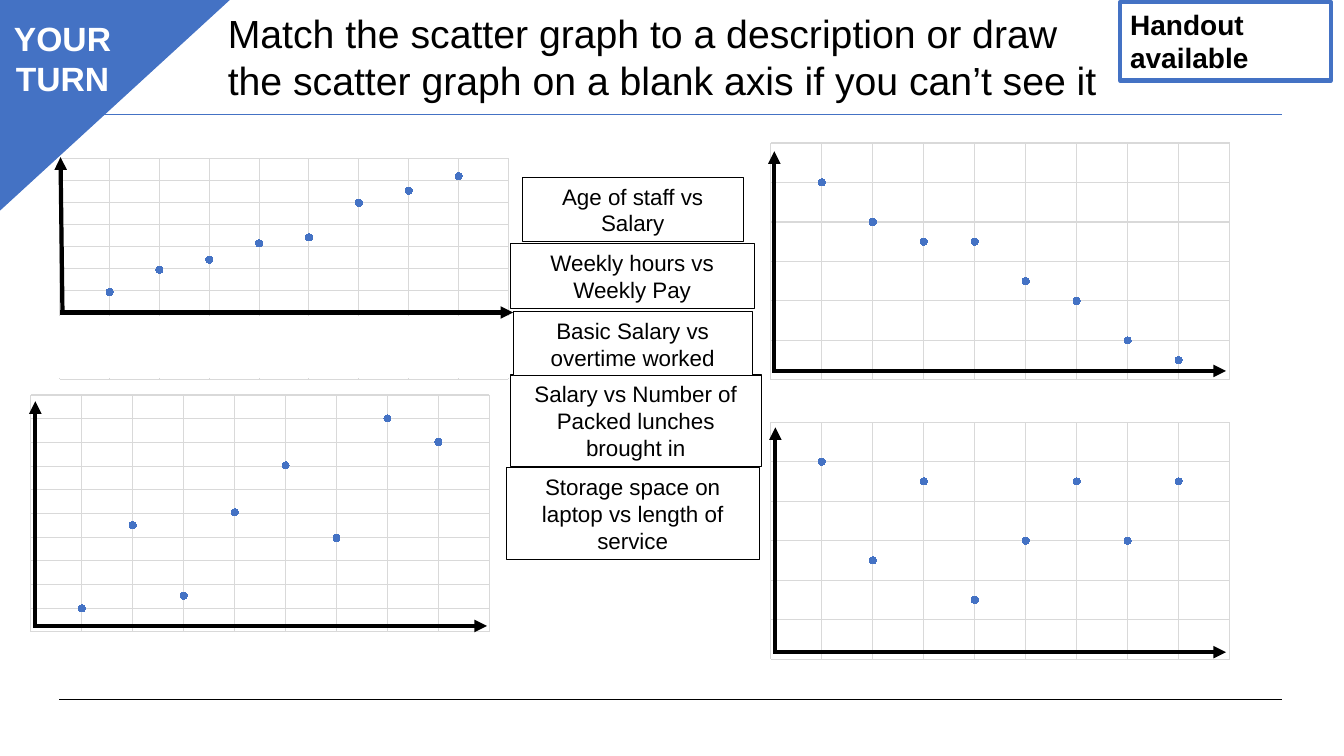
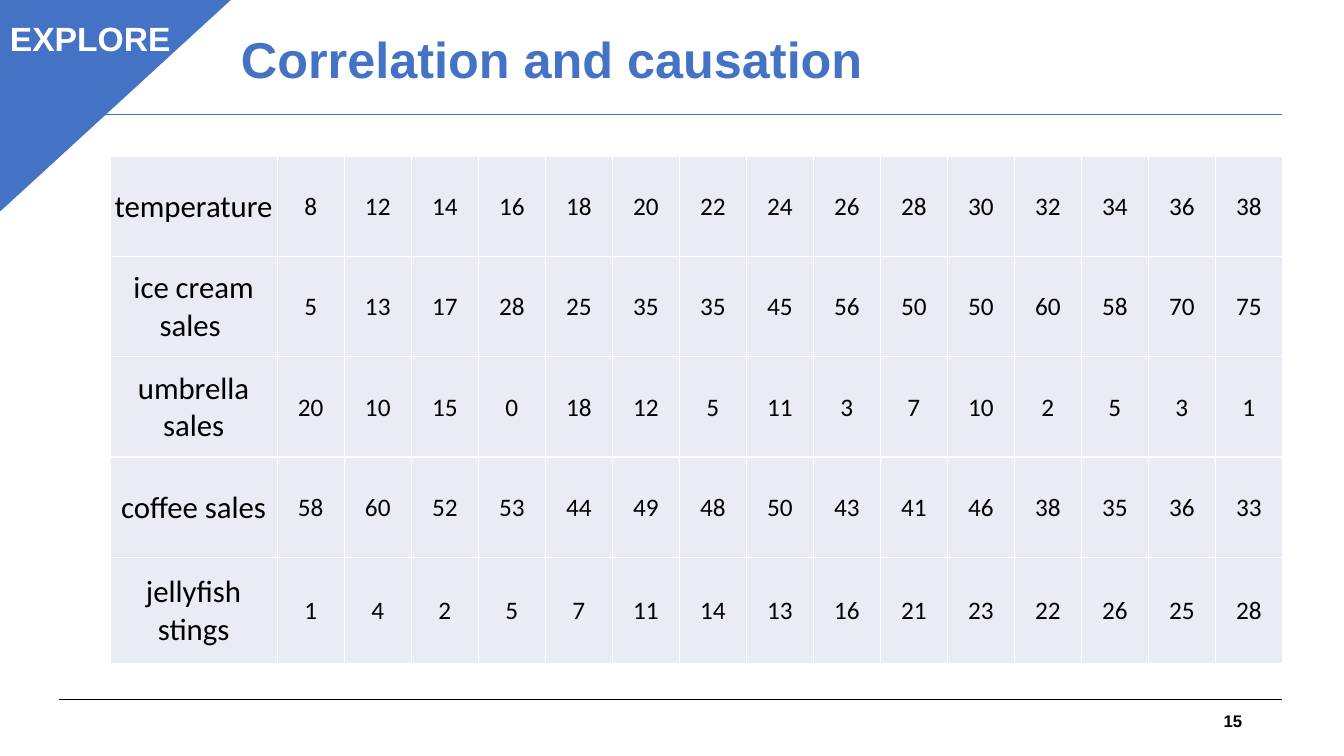
from dataclasses import dataclass

from lxml import etree
from pptx import Presentation
from pptx import util as u
from pptx.chart.data import XyChartData
from pptx.dml.color import RGBColor
from pptx.enum import chart as ch
from pptx.enum import shapes, text
from pptx.oxml.ns import qn

IN = u.Inches


@dataclass(frozen=True)
class Theme:
    blue: RGBColor = RGBColor(0x44, 0x72, 0xC4)
    black: RGBColor = RGBColor(0, 0, 0)
    white: RGBColor = RGBColor(255, 255, 255)
    grid: RGBColor = RGBColor(0xD9, 0xD9, 0xD9)
    cell: RGBColor = RGBColor(0xE9, 0xEB, 0xF5)
    font: str = "Arial"
    data_font: str = "Calibri"
    task: int = 28
    heading: int = 36
    tag: int = 24
    handout: int = 20
    label: int = 16
    number: int = 12
    row_head: int = 22
    value: int = 18
    axis: int = 10
    thin: float = 0.75
    thick: float = 3


T = Theme()

GRAPHS = [
    dict(at=(0.54, 1.32), plot=(0.011, 0.102, 0.939, 0.898), top=109, step=10.9,
         ys=(43, 54, 59, 67, 70, 87, 93, 100), mask=(0.54, 3.14, 4.55, 0.6),
         corner=(0.6, 3.1), tip=(5.09, 1.56), stem=(0.62, 0.6)),
    dict(at=(7.55, 1.37), top=120, step=20, ys=(100, 80, 70, 70, 50, 40, 20, 10),
         corner=(7.66, 3.68), tip=(12.16, 1.5), stem=(7.68, 7.68)),
    dict(at=(7.55, 4.14), top=120, step=20, ys=(100, 50, 90, 30, 60, 90, 60, 90),
         corner=(7.67, 6.47), tip=(12.16, 4.24), stem=(7.69, 7.69)),
    dict(at=(0.21, 3.87), top=111, step=11.1, ys=(11, 50, 17, 56, 78, 44, 100, 89),
         corner=(0.33, 6.21), tip=(4.83, 3.98), stem=(0.35, 0.35)),
]

LABELS = [
    ("Age of staff vs Salary", (5.18, 1.76, 2.19, 0.64)),
    ("Weekly hours vs Weekly Pay", (5.06, 2.42, 2.42, 0.64)),
    ("Storage space on laptop vs length of service", (5.02, 4.64, 2.51, 0.91)),
    ("Salary vs Number of Packed lunches brought in", (5.06, 3.72, 2.49, 0.91)),
    ("Basic Salary vs overtime worked", (5.09, 3.09, 2.37, 0.64)),
]

ROWS = [
    ("temperature", 8, 12, 14, 16, 18, 20, 22, 24, 26, 28, 30, 32, 34, 36, 38),
    ("ice cream sales ", 5, 13, 17, 28, 25, 35, 35, 45, 56, 50, 50, 60, 58, 70, 75),
    ("umbrella sales", 20, 10, 15, 0, 18, 12, 5, 11, 3, 7, 10, 2, 5, 3, 1),
    ("coffee sales", 58, 60, 52, 53, 44, 49, 48, 50, 43, 41, 46, 38, 35, 36, 33),
    ("jellyfish stings", 1, 4, 2, 5, 7, 11, 14, 13, 16, 21, 23, 22, 26, 25, 28),
]


def inches(values):
    return [IN(v) for v in values]


def style_font(f, size, color=T.black, bold=False, name=T.font):
    f.size, f.bold, f.name = u.Pt(size), bold, name
    f.color.rgb = color


def write(sp, words, size, color=T.black, bold=False, align="LEFT", anchor="TOP"):
    tf = sp.text_frame
    tf.text = words
    tf.word_wrap = True
    tf.auto_size = text.MSO_AUTO_SIZE.NONE
    tf.vertical_anchor = getattr(text.MSO_ANCHOR, anchor)
    for p in tf.paragraphs:
        p.alignment = getattr(text.PP_ALIGN, align)
        style_font(p.font, size, color, bold)


def title(s, words, box, size, color=T.black, bold=False):
    sp = s.shapes.title
    sp.left, sp.top, sp.width, sp.height = inches(box)
    write(sp, words, size, color, bold)


def text_box(s, words, box, size, **style):
    write(s.shapes.add_textbox(*inches(box)), words, size, **style)


def shape(s, kind, box, fill, line, width):
    sp = s.shapes.add_shape(kind, *inches(box))
    sp.shadow.inherit = False
    if fill is None:
        sp.fill.background()
    else:
        sp.fill.solid()
        sp.fill.fore_color.rgb = fill
    sp.line.color.rgb = line
    sp.line.width = u.Pt(width)
    return sp


def rect(s, box, fill=T.white, line=T.black, width=T.thin):
    return shape(s, shapes.MSO_SHAPE.RECTANGLE, box, fill, line, width)


def line(s, start, end, color=T.black, width=T.thin, arrow=False):
    cn = s.shapes.add_connector(shapes.MSO_CONNECTOR.STRAIGHT, *inches(start + end))
    cn.line.color.rgb = color
    cn.line.width = u.Pt(width)
    if arrow:
        etree.SubElement(cn.line._get_or_add_ln(), qn("a:tailEnd"), type="triangle")
    etree.SubElement(cn.element.spPr, qn("a:effectLst"))
    return cn


def corner_tag(s, words, box, left=0.0):
    sp = shape(s, shapes.MSO_SHAPE.ISOSCELES_TRIANGLE, (left, -0.01, 2.29, 2.1),
               T.blue, T.blue, 1)
    sp.adjustments[0] = 0
    sp.element.spPr.find(qn("a:xfrm")).set("flipV", "1")
    text_box(s, words, box, T.tag, color=T.white, bold=True, align="CENTER")


def style_axis(ax, top, step):
    ax.minimum_scale, ax.maximum_scale, ax.major_unit = 0, top, step
    ax.has_major_gridlines = True
    ax.major_gridlines.format.line.color.rgb = T.grid
    ax.major_gridlines.format.line.width = u.Pt(T.thin)
    ax.visible = False


def set_plot_area(chart, plot):
    area = chart._chartSpace.chart.plotArea
    for old in area.findall(qn("c:layout")):
        area.remove(old)
    layout = etree.Element(qn("c:layout"))
    manual = etree.SubElement(layout, qn("c:manualLayout"))
    parts = [("layoutTarget", "inner"), ("xMode", "edge"), ("yMode", "edge")]
    for tag, val in parts + list(zip("xywh", plot)):
        etree.SubElement(manual, qn(f"c:{tag}"), val=str(val))
    area.insert(0, layout)


def scatter(s, at, ys, top, step, corner, tip, stem,
            plot=(0.02, 0.02, 0.96, 0.96), mask=None):
    data = XyChartData()
    points = data.add_series("Series 1")
    for x, y in enumerate(ys, 1):
        points.add_data_point(x, y)
    chart = s.shapes.add_chart(ch.XL_CHART_TYPE.XY_SCATTER,
                               *inches(at + (4.74, 2.45)), data).chart
    chart.has_legend = chart.has_title = False
    style_font(chart.font, T.axis, name=T.data_font)
    chart.plots[0].vary_by_categories = False
    ser = chart.plots[0].series[0]
    ser.smooth = False
    ser.format.line.fill.background()
    ser.marker.style, ser.marker.size = ch.XL_MARKER_STYLE.CIRCLE, 5
    ser.marker.format.fill.solid()
    ser.marker.format.fill.fore_color.rgb = T.blue
    ser.marker.format.line.color.rgb = T.blue
    style_axis(chart.category_axis, len(ys) + 1, 1)
    style_axis(chart.value_axis, top, step)
    set_plot_area(chart, plot)
    if mask:
        rect(s, mask, line=T.white, width=1)
    base, peak = corner[1], tip[1]
    line(s, (stem[0], base), (stem[1], peak), width=T.thick, arrow=True)
    line(s, corner, (tip[0], base), width=T.thick, arrow=True)


def style_cell(cell, words, size):
    cell.text = words
    cell.vertical_anchor = text.MSO_ANCHOR.MIDDLE
    cell.margin_left = cell.margin_right = cell.margin_top = IN(0.01)
    cell.margin_bottom = 0
    p = cell.text_frame.paragraphs[0]
    p.alignment = text.PP_ALIGN.CENTER
    p.space_before = p.space_after = u.Pt(6)
    style_font(p.font, size, name=T.data_font)
    props = cell._tc.get_or_add_tcPr()
    for side in ("lnL", "lnR", "lnT", "lnB"):
        ln = etree.SubElement(props, qn(f"a:{side}"), w=str(u.Pt(1)))
        fill = etree.SubElement(ln, qn("a:solidFill"))
        etree.SubElement(fill, qn("a:srgbClr"), val=str(T.white))
    cell.fill.solid()
    cell.fill.fore_color.rgb = T.cell


def data_table(s, rows, box, head_width, last_height):
    width, height = box[2:]
    count = len(rows[0])
    tbl = s.shapes.add_table(len(rows), count, *inches(box)).table
    tbl.first_row = tbl.horz_banding = False
    for i, col in enumerate(tbl.columns):
        col.width = IN((width - head_width) / (count - 1) if i else head_width)
    for row in tbl.rows:
        row.height = IN((height - last_height) / (len(rows) - 1))
    tbl.rows[len(rows) - 1].height = IN(last_height)
    for r, row in enumerate(rows):
        for c, value in enumerate(row):
            style_cell(tbl.cell(r, c), str(value), T.value if c else T.row_head)


def add_rules(layout, s):
    for y, color in ((6.94, T.black), (1.14, T.blue)):
        layout.shapes.element.append(line(s, (0.59, y), (12.72, y), color).element)


def match_slide(s):
    title(s, "Match the scatter graph to a description or draw the scatter graph "
             "on a blank axis if you can’t see it", (2.16, 0.04, 8.95, 1.04), T.task)
    for graph in GRAPHS:
        scatter(s, **graph)
    for words, box in LABELS:
        write(rect(s, box), words, T.label, align="CENTER", anchor="MIDDLE")
    handout = rect(s, (11.11, 0.02, 2.09, 0.78), None, T.blue, T.thick)
    write(handout, "Handout\vavailable", T.handout, bold=True)
    corner_tag(s, "YOUR \nTURN", (0.03, 0.13, 1.18, 0.83), left=-0.01)


def causation_slide(s):
    title(s, "Correlation and causation", (2.29, 0.23, 6.64, 0.71),
          T.heading, T.blue, True)
    text_box(s, "15", (9.42, 6.95, 3, 0.4), T.number, bold=True,
             align="RIGHT", anchor="MIDDLE")
    data_table(s, ROWS, (1.09, 1.55, 11.63, 5.03), 1.66, 1.05)
    corner_tag(s, "EXPLORE", (-0.05, 0.13, 1.89, 0.5))


def main():
    prs = Presentation()
    prs.slide_width, prs.slide_height = IN(13.33), IN(7.5)
    layout = prs.slide_layouts[5]
    first, second = (prs.slides.add_slide(layout) for _ in range(2))
    add_rules(layout, first)
    match_slide(first)
    causation_slide(second)
    prs.save("out.pptx")


if __name__ == "__main__":
    main()
